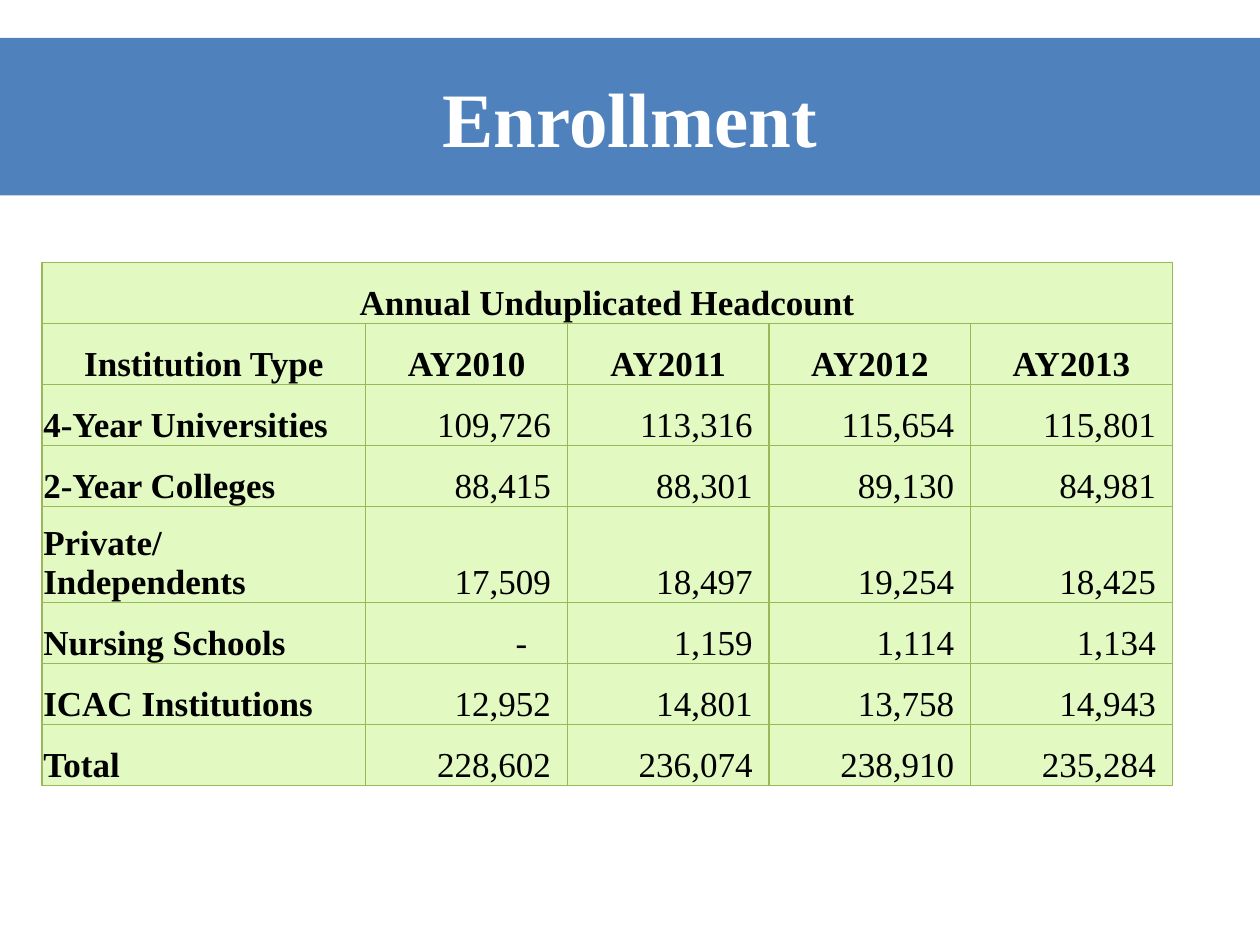
from dataclasses import dataclass

from lxml import etree
from pptx import Presentation
from pptx.dml.color import RGBColor
from pptx.enum.text import MSO_ANCHOR, PP_ALIGN
from pptx.oxml.ns import qn
from pptx.util import Inches, Pt

LEFT, MID, RIGHT = PP_ALIGN.LEFT, PP_ALIGN.CENTER, PP_ALIGN.RIGHT
BASE, CORE = MSO_ANCHOR.BOTTOM, MSO_ANCHOR.MIDDLE
FONT = "Times New Roman"
HUES = {"band": "4F81BD", "cell": "E2FAC2", "edge": "98B955",
        "ink": "000000", "white": "FFFFFF"}
WIDE, HIGH = 10, 7.5
COLS = [2.57] + [1.6] * 4
LOW, TALL = 0.485, 0.76
INSET, PAD, DASH = 0.01, 0.13, 0.32


@dataclass
class Row:
    name: str
    vals: list[str]
    high: float = LOW


YEARS = ["AY2010", "AY2011", "AY2012", "AY2013"]
ROWS = [
    Row("4-Year Universities", ["109,726", "113,316", "115,654", "115,801"]),
    Row("2-Year Colleges", ["88,415", "88,301", "89,130", "84,981"]),
    Row("Private/ Independents", ["17,509", "18,497", "19,254", "18,425"], TALL),
    Row("Nursing Schools", ["-", "1,159", "1,114", "1,134"]),
    Row("ICAC Institutions", ["12,952", "14,801", "13,758", "14,943"]),
    Row("Total", ["228,602", "236,074", "238,910", "235,284"]),
]


def style(para, size: float, hue: str, bold: bool, align) -> None:
    para.alignment = align
    font = para.font
    font.name, font.size, font.bold = FONT, Pt(size), bold
    font.color.rgb = RGBColor.from_string(HUES[hue])


def frame(cell) -> None:
    props = cell._tc.get_or_add_tcPr()
    for side in ("lnL", "lnR", "lnT", "lnB"):
        line = etree.SubElement(props, qn(f"a:{side}"), w=str(Pt(0.75)))
        fill = etree.SubElement(line, qn("a:solidFill"))
        etree.SubElement(fill, qn("a:srgbClr"), val=HUES["edge"])
    cell.fill.solid()
    cell.fill.fore_color.rgb = RGBColor.from_string(HUES["cell"])


def write(cell, text: str, bold: bool, align, pad: float = INSET) -> None:
    cell.text = text
    cell.vertical_anchor = BASE
    cell.margin_left = cell.margin_top = Inches(INSET)
    cell.margin_right, cell.margin_bottom = Inches(pad), 0
    style(cell.text_frame.paragraphs[0], 20, "ink", bold, align)


def head(slide) -> None:
    title = slide.shapes.title
    title.left, title.top = 0, Inches(HIGH * 0.04)
    title.width, title.height = Inches(WIDE), Inches(HIGH / 6)
    title.fill.solid()
    title.fill.fore_color.rgb = RGBColor.from_string(HUES["band"])
    title.text = "Enrollment"
    title.text_frame.vertical_anchor = CORE
    style(title.text_frame.paragraphs[0], 44, "white", True, MID)


def grid(slide) -> None:
    highs = [LOW, LOW] + [row.high for row in ROWS]
    shape = slide.shapes.add_table(
        len(highs), len(COLS), Inches(WIDE / 30), Inches(2.08),
        Inches(sum(COLS)), Inches(sum(highs)))
    table = shape.table
    for col, wide in zip(table.columns, COLS):
        col.width = Inches(wide)
    for row, high in zip(table.rows, highs):
        row.height = Inches(high)
    for cell in table.iter_cells():
        frame(cell)
    table.cell(0, 0).merge(table.cell(0, len(COLS) - 1))
    write(table.cell(0, 0), "Annual Unduplicated Headcount", True, MID)
    for c, text in enumerate(["Institution Type"] + YEARS):
        write(table.cell(1, c), text, True, MID)
    for r, row in enumerate(ROWS, 2):
        write(table.cell(r, 0), row.name, True, LEFT)
        for c, val in enumerate(row.vals, 1):
            write(table.cell(r, c), val, False, RIGHT, DASH if val == "-" else PAD)


def main() -> None:
    deck = Presentation()
    deck.slide_width, deck.slide_height = Inches(WIDE), Inches(HIGH)
    slide = deck.slides.add_slide(deck.slide_layouts[5])
    head(slide)
    grid(slide)
    deck.save("out.pptx")


if __name__ == "__main__":
    main()
